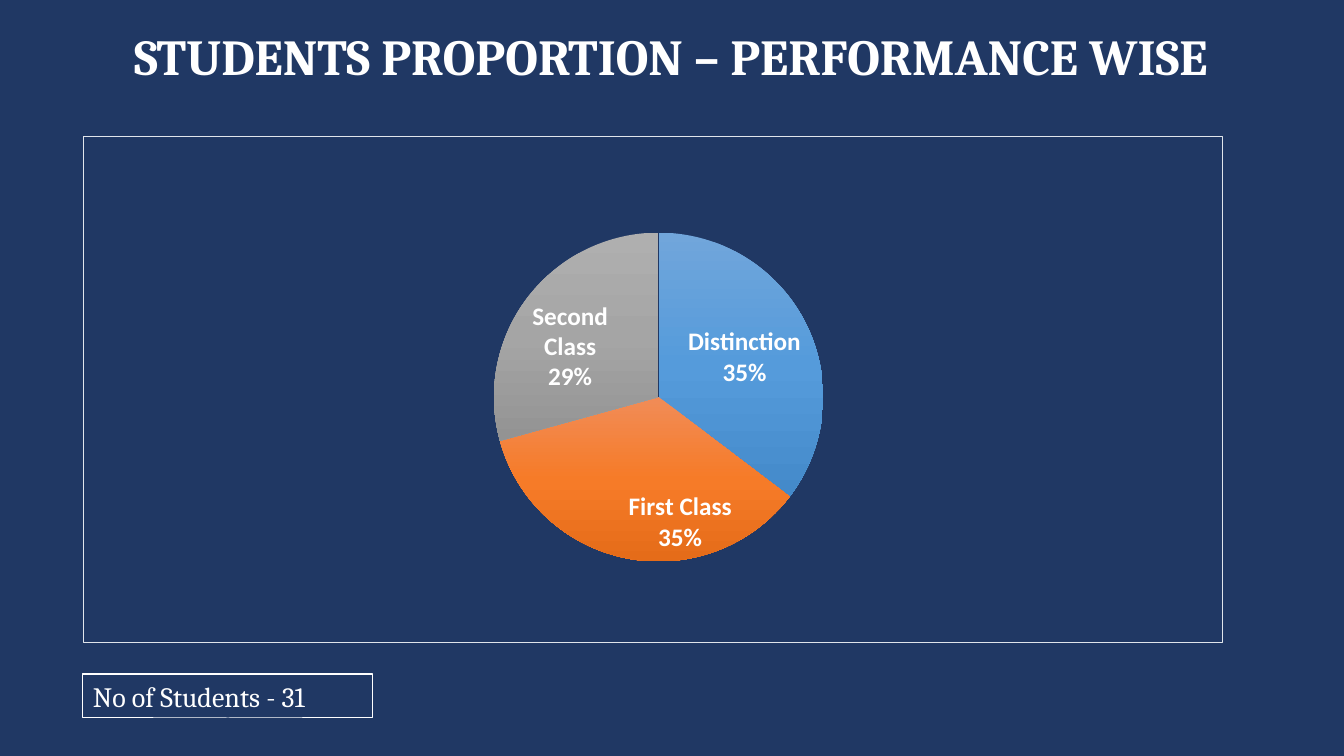
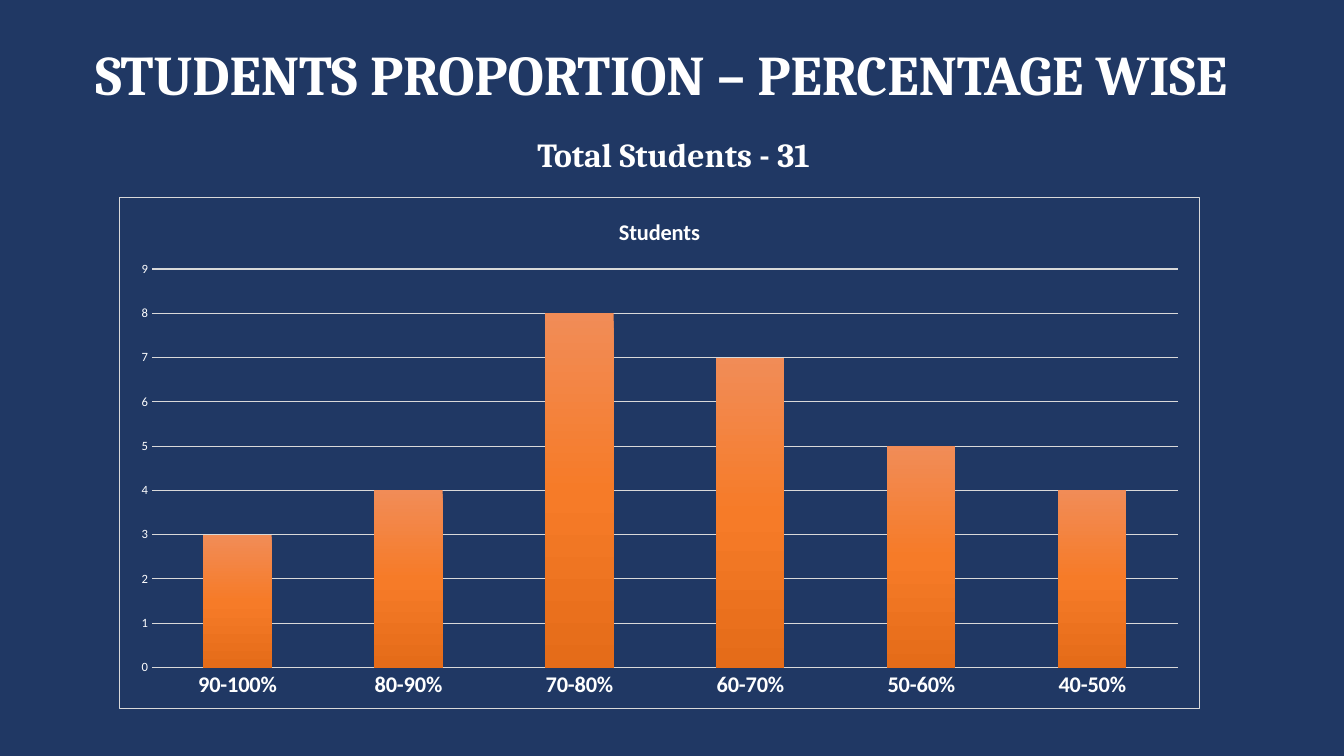
from copy import deepcopy
from dataclasses import dataclass

from pptx import Presentation
from pptx.chart.chart import Chart
from pptx.chart.data import CategoryChartData
from pptx.dml.color import RGBColor
from pptx.dml.fill import FillFormat
from pptx.enum.chart import XL_CHART_TYPE, XL_LABEL_POSITION, XL_TICK_MARK
from pptx.enum.shapes import MSO_SHAPE
from pptx.enum.text import MSO_ANCHOR, MSO_AUTO_SIZE, PP_ALIGN
from pptx.oxml import parse_xml
from pptx.oxml.ns import nsdecls, qn
from pptx.oxml.xmlchemy import OxmlElement
from pptx.shapes.base import BaseShape
from pptx.slide import Slide
from pptx.text.text import Font
from pptx.util import Emu, Pt

WIDE, HIGH = 1344, 756
SCALE = 12192000 / WIDE


@dataclass(frozen=True)
class Theme:
    back: str = "203864"
    ink: str = "FFFFFF"
    grid: str = "D9D9D9"
    edge: str = "E0E5EB"
    blue: tuple[str, ...] = ("71A6DB", "559BDB", "448ACA")
    orange: tuple[str, ...] = ("F18C57", "F67B28", "E56C19")
    grey: tuple[str, ...] = ("AFAFAF", "A5A5A5", "939393")
    gold: tuple[str, ...] = ("FFC64B", "FFC000", "E3AB00")
    serif: str = "Cambria"
    sans: str = "Calibri"
    head: int = 40
    tight: int = 36
    sub: int = 24
    note: int = 20
    label: int = 18
    axis: int = 16
    tick: int = 9
    hair: float = 0.75


@dataclass(frozen=True)
class Box:
    x: int
    y: int
    w: int
    h: int

    def emu(self) -> tuple[Emu, ...]:
        return tuple(Emu(round(n * SCALE)) for n in (self.x, self.y, self.w, self.h))


@dataclass(frozen=True)
class Plot:
    """Inner plot area, as shares of the chart frame."""
    x: float
    y: float
    w: float
    h: float


THEME = Theme()


def rgb(code: str) -> RGBColor:
    return RGBColor.from_string(code)


def style(font: Font, face: str, size: int, bold: bool = False) -> None:
    font.name, font.size, font.bold = face, Pt(size), bold
    font.color.rgb = rgb(THEME.ink)


def write(shape: BaseShape, text: str, size: int, bold: bool = True,
          align: PP_ALIGN = PP_ALIGN.CENTER,
          anchor: MSO_ANCHOR = MSO_ANCHOR.TOP) -> None:
    frame = shape.text_frame
    frame.word_wrap = True
    frame.auto_size = MSO_AUTO_SIZE.NONE
    frame.vertical_anchor = anchor
    para = frame.paragraphs[0]
    para.text, para.alignment = text, align
    style(para.font, THEME.serif, size, bold)


def start(deck: Presentation, text: str, box: Box, size: int) -> Slide:
    """Add a title-only slide and set its title."""
    slide = deck.slides.add_slide(deck.slide_layouts[5])
    title = slide.shapes.title
    title.left, title.top, title.width, title.height = box.emu()
    write(title, text, size)
    return slide


def shade(fill: FillFormat, tones: tuple[str, ...]) -> None:
    """Fill with a three-stop gradient that runs downwards."""
    fill.gradient()
    fill.gradient_angle = 270
    first = fill.gradient_stops[0]._gs
    first.addnext(deepcopy(first))
    for place, (stop, tone) in enumerate(zip(fill.gradient_stops, tones)):
        stop.position = place / 2
        stop.color.rgb = rgb(tone)


def add_plot(slide: Slide, kind: XL_CHART_TYPE, box: Box, plot: Plot,
             values: dict[str, int], edge: str) -> Chart:
    """Add a one-series chart with a thin frame and a fixed plot area."""
    data = CategoryChartData()
    data.categories = list(values)
    data.add_series("Series 1", list(values.values()))
    chart = slide.shapes.add_chart(kind, *box.emu(), data).chart
    chart.has_legend = False
    chart.has_title = False
    chart.plots[0].vary_by_categories = False
    style(chart.font, THEME.sans, 10)

    root = chart._chartSpace
    root.find(qn("c:txPr")).addprevious(parse_xml(
        f'<c:spPr {nsdecls("c", "a")}><a:noFill/><a:ln w="{Pt(THEME.hair)}">'
        f'<a:solidFill><a:srgbClr val="{edge}"/></a:solidFill></a:ln></c:spPr>'))
    area = root.find(".//" + qn("c:plotArea"))
    for old in area.findall(qn("c:layout")):
        area.remove(old)
    area.insert(0, parse_xml(
        f'<c:layout {nsdecls("c")}><c:manualLayout><c:layoutTarget val="inner"/>'
        '<c:xMode val="edge"/><c:yMode val="edge"/>'
        f'<c:x val="{plot.x}"/><c:y val="{plot.y}"/>'
        f'<c:w val="{plot.w}"/><c:h val="{plot.h}"/></c:manualLayout></c:layout>'))
    return chart


def add_pie(slide: Slide, box: Box, values: dict[str, int]) -> None:
    chart = add_plot(slide, XL_CHART_TYPE.PIE, box, Plot(0.36, 0.19, 0.29, 0.65),
                     values, THEME.edge)
    chart.plots[0].vary_by_categories = True
    series = chart.plots[0].series[0]
    tones = (THEME.blue, THEME.orange, THEME.grey, THEME.gold)
    for spot, tone in enumerate(tones):
        shade(series.points[spot].format.fill, tone)

    labels = series.data_labels
    labels.show_value = False
    labels.show_category_name = labels.show_percentage = True
    labels.number_format, labels.number_format_is_linked = "0%", False
    labels.position = XL_LABEL_POSITION.INSIDE_END
    style(labels.font, THEME.sans, THEME.label, True)
    node = labels._element
    split = OxmlElement("c:separator")
    split.text = "\n"
    node.find(qn("c:showBubbleSize")).addnext(split)
    empty = [spot for spot, value in enumerate(values.values()) if not value]
    for place, spot in enumerate(empty):
        node.insert(place, parse_xml(
            f'<c:dLbl {nsdecls("c")}><c:idx val="{spot}"/><c:delete val="1"/></c:dLbl>'))


def add_bars(slide: Slide, box: Box, title: str, values: dict[str, int]) -> None:
    chart = add_plot(slide, XL_CHART_TYPE.COLUMN_CLUSTERED, box,
                     Plot(0.03, 0.14, 0.95, 0.78), values, THEME.grid)
    para = chart.chart_title.text_frame.paragraphs[0]
    para.text = title
    style(para.font, THEME.sans, THEME.axis, True)
    chart.chart_title.include_in_layout = False
    chart.plots[0].gap_width = 150
    shade(chart.plots[0].series[0].format.fill, THEME.orange)

    base, side = chart.category_axis, chart.value_axis
    for axis, size, bold in ((base, THEME.axis, True), (side, THEME.tick, False)):
        axis.major_tick_mark = axis.minor_tick_mark = XL_TICK_MARK.NONE
        style(axis.tick_labels.font, THEME.sans, size, bold)
    side.minimum_scale, side.maximum_scale, side.major_unit = 0, 9, 1
    side.format.line.fill.background()
    side.has_major_gridlines = True
    for line, width in ((base.format.line, 1), (side.major_gridlines.format.line, THEME.hair)):
        line.color.rgb = rgb(THEME.grid)
        line.width = Pt(width)


def add_note(slide: Slide, text: str, box: Box) -> None:
    note = slide.shapes.add_shape(MSO_SHAPE.RECTANGLE, *box.emu())
    note.shadow.inherit = False
    note.fill.background()
    note.line.color.rgb = rgb(THEME.ink)
    note.line.width = Pt(THEME.hair)
    write(note, text, THEME.note, False, PP_ALIGN.LEFT, MSO_ANCHOR.MIDDLE)


def main() -> None:
    deck = Presentation()
    _, _, deck.slide_width, deck.slide_height = Box(0, 0, WIDE, HIGH).emu()
    back = deck.slide_master.background.fill
    back.solid()
    back.fore_color.rgb = rgb(THEME.back)

    slide = start(deck, "STUDENTS PROPORTION – PERFORMANCE WISE",
                  Box(23, 20, 1296, 72), THEME.tight)
    add_note(slide, "No of Students - 31", Box(83, 674, 290, 44))
    add_pie(slide, Box(83, 136, 1140, 507),
            {"Distinction": 35, "First Class": 35, "Second Class": 29, "Pass": 0})

    slide = start(deck, "STUDENTS PROPORTION – PERCENTAGE WISE",
                  Box(32, 34, 1259, 78), THEME.head)
    total = slide.shapes.add_textbox(*Box(119, 129, 1109, 50).emu())
    write(total, "Total Students - 31", THEME.sub)
    add_bars(slide, Box(119, 197, 1081, 512), "Students",
             {"90-100%": 3, "80-90%": 4, "70-80%": 8,
              "60-70%": 7, "50-60%": 5, "40-50%": 4})
    deck.save("out.pptx")


if __name__ == "__main__":
    main()
